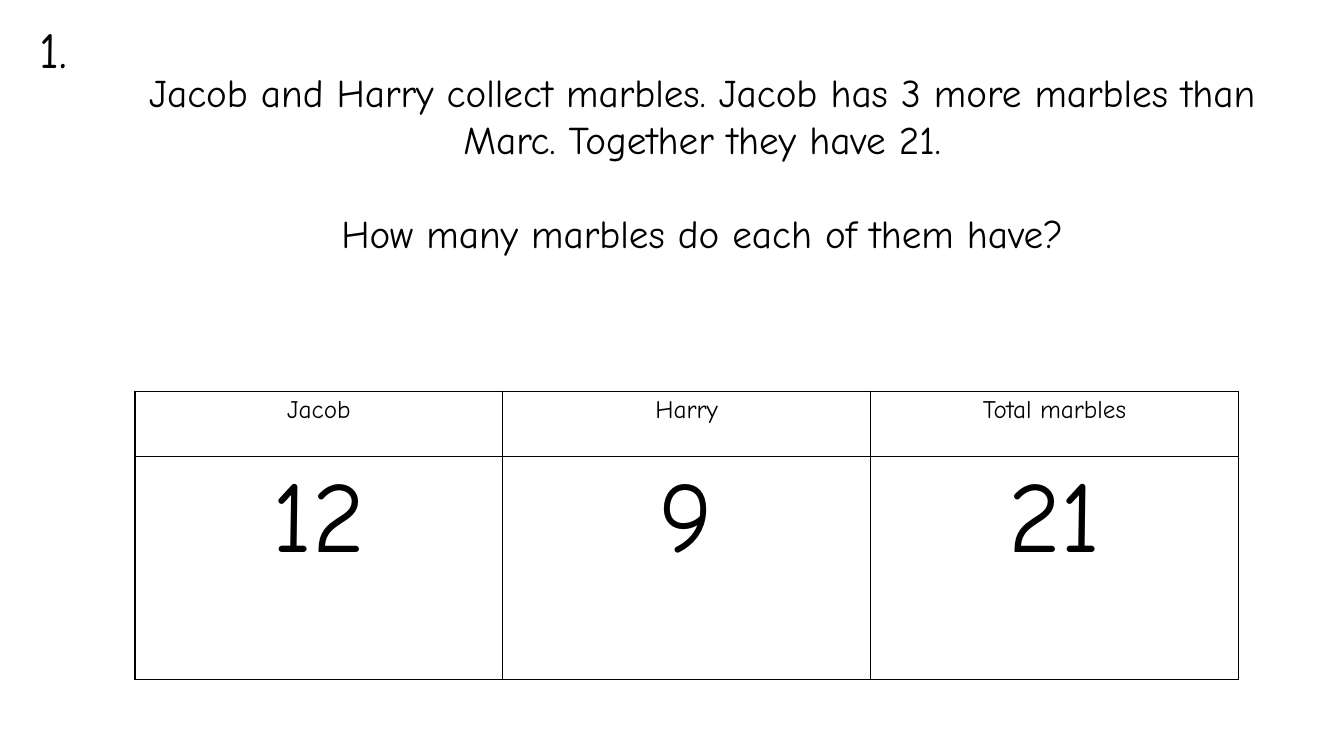
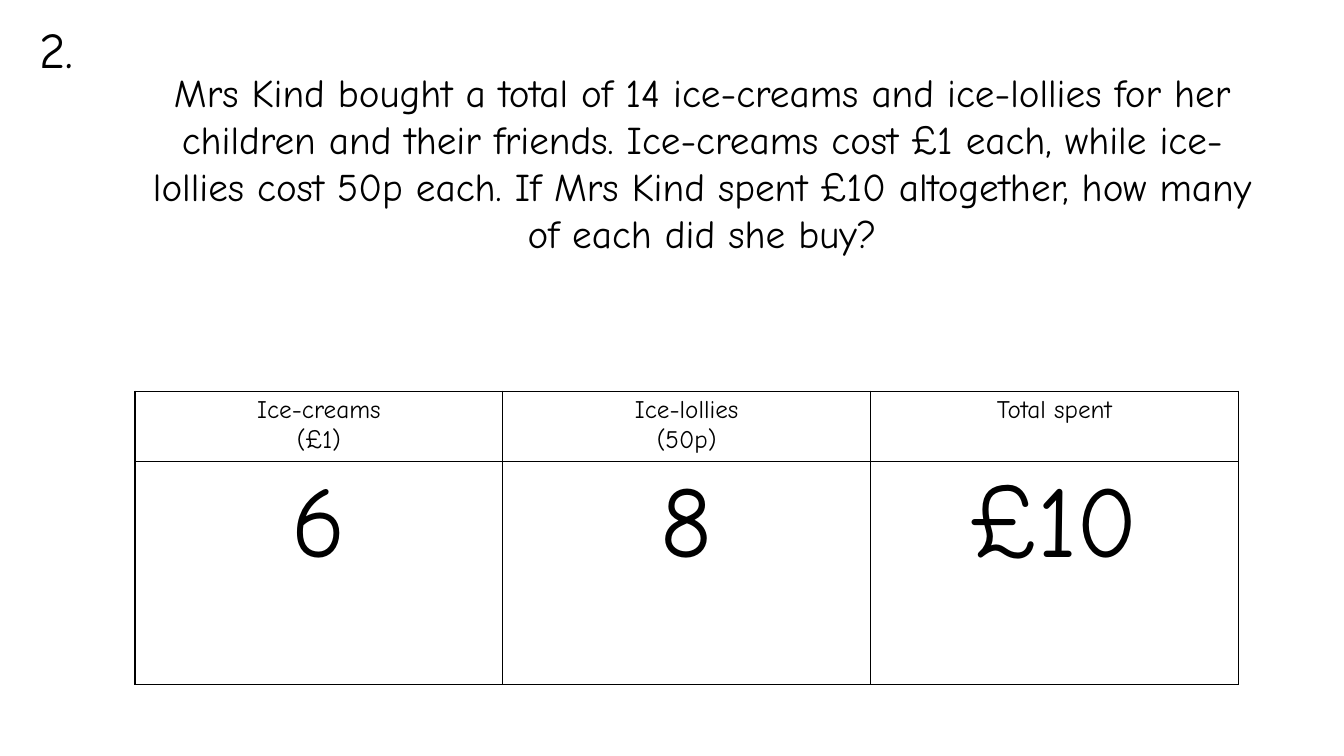
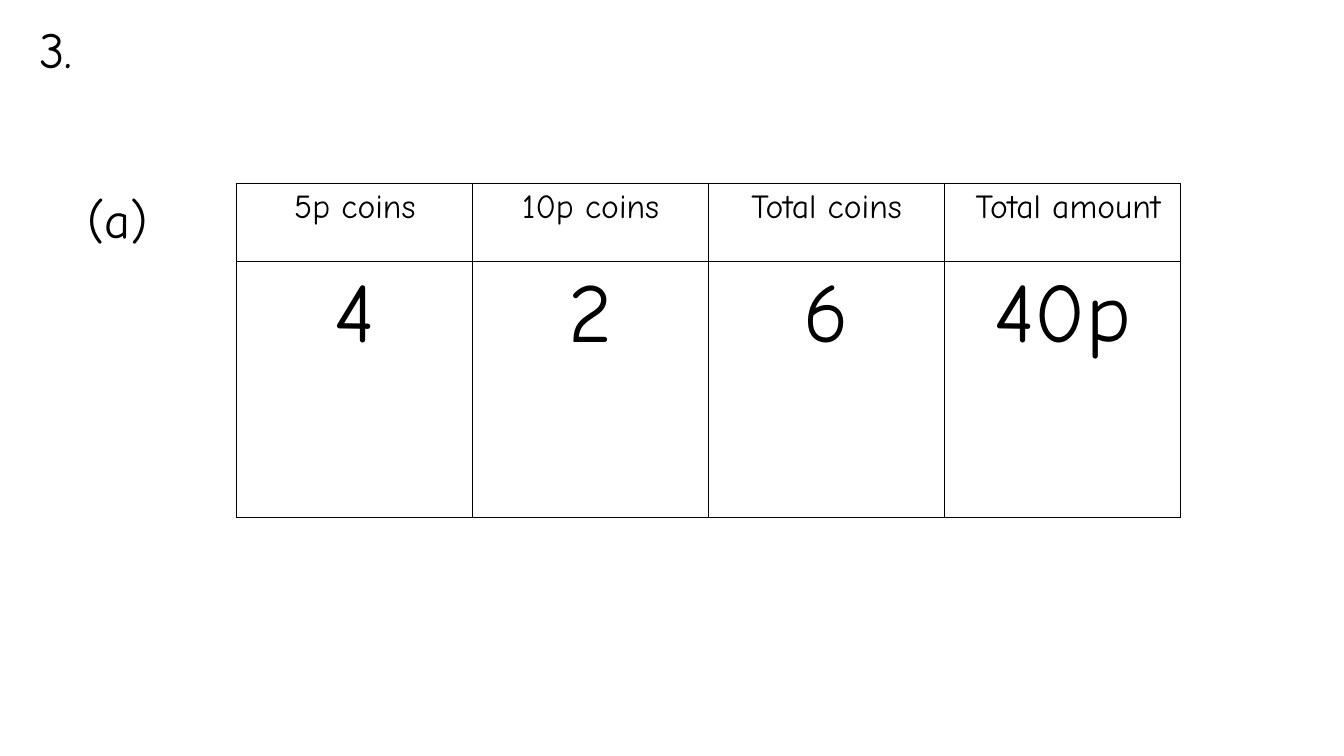
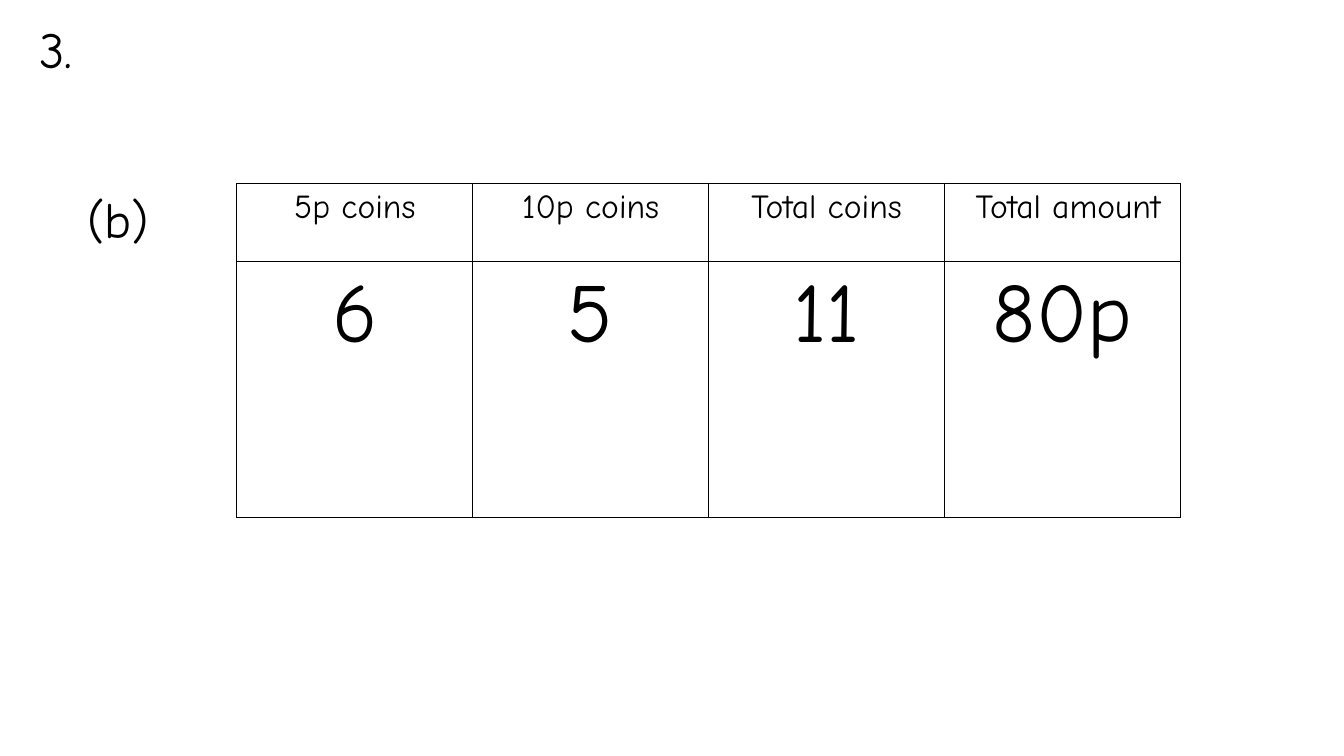
from lxml.etree import SubElement
from pptx import Presentation
from pptx.dml.color import RGBColor
from pptx.enum.text import MSO_AUTO_SIZE, PP_ALIGN
from pptx.oxml.ns import qn
from pptx.util import Pt

FONT = "Comic Neue"
BLACK = "000000"

NUMBER_BOX = (20.9, 9.4, 64, 51)
QUESTION_BOX = (96.5, 45.4, 810, 143)
PART_BOX = (55.4, 131, 71, 51)

# Table layouts: left, top, width, row heights, text size of each row
WORD_PROBLEM_TABLE = (96.5, 279.4, 788, (46.8, 159), (18, 72))
COIN_TABLE = (169.2, 131, 674, (56, 182.4), (24, 60))
COIN_HEADERS = ["5p coins", "10p coins", "Total coins", " Total amount"]

PROBLEMS = [
    {
        "number": "1.",
        "question": "Jacob and Harry collect marbles. Jacob has 3 more marbles than Marc. "
                    "Together they have 21.\nHow many marbles do each of them have?",
        "layout": WORD_PROBLEM_TABLE,
        "rows": [["Jacob", "Harry", "Total marbles"], ["12", "9", "21"]],
    },
    {
        "number": "2.",
        "question": "Mrs Kind bought a total of 14 ice-creams and ice-lollies for her children "
                    "and their friends. Ice-creams cost £1 each, while ice-lollies cost 50p each. "
                    "If Mrs Kind spent £10 altogether, how many of each did she buy?",
        "layout": WORD_PROBLEM_TABLE,
        "rows": [["Ice-creams\n(£1)", "Ice-lollies\n(50p)", "Total spent"], ["6", "8", "£10"]],
    },
    {
        "number": "3.",
        "part": "(a)",
        "layout": COIN_TABLE,
        "rows": [COIN_HEADERS, ["4", "2", "6", "40p"]],
    },
    {
        "number": "3.",
        "part": "(b)",
        "layout": COIN_TABLE,
        "rows": [COIN_HEADERS, ["6", "5", "11", "80p"]],
    },
]


def write_text(text_frame, text, size=36, align=PP_ALIGN.LEFT, gap=0, color=BLACK):
    """Write one paragraph per line of text, with a gap between paragraphs."""
    text_frame.word_wrap = True
    for index, line in enumerate(text.split("\n")):
        paragraph = text_frame.add_paragraph() if index else text_frame.paragraphs[0]
        paragraph.alignment = align
        paragraph.space_before = Pt(gap if index else 0)
        run = paragraph.add_run()
        run.text = line
        run.font.name = FONT
        run.font.size = Pt(size)
        run.font.color.rgb = RGBColor.from_string(color)


def set_cell_borders(cell, color=BLACK, width=1):
    properties = cell._tc.get_or_add_tcPr()
    for side in ("lnL", "lnR", "lnT", "lnB"):
        line = SubElement(properties, qn(f"a:{side}"), w=str(Pt(width)))
        fill = SubElement(line, qn("a:solidFill"))
        SubElement(fill, qn("a:srgbClr"), val=color)


presentation = Presentation()
presentation.slide_width = Pt(960)
presentation.slide_height = Pt(540)

for problem in PROBLEMS:
    slide = presentation.slides.add_slide(presentation.slide_layouts[6])

    labels = [
        ("number", NUMBER_BOX, {}),
        ("question", QUESTION_BOX, {"size": 28, "align": PP_ALIGN.CENTER, "gap": 33.6}),
        ("part", PART_BOX, {}),
    ]
    for name, box, text_format in labels:
        if name in problem:
            text_box = slide.shapes.add_textbox(*map(Pt, box))
            write_text(text_box.text_frame, problem[name], **text_format)
            text_box.text_frame.auto_size = MSO_AUTO_SIZE.SHAPE_TO_FIT_TEXT

    left, top, width, heights, sizes = problem["layout"]
    rows = problem["rows"]
    table = slide.shapes.add_table(
        len(rows), len(rows[0]), Pt(left), Pt(top), Pt(width), Pt(sum(heights))
    ).table
    table.first_row = False
    table.horz_banding = False
    for row_index, (texts, height, size) in enumerate(zip(rows, heights, sizes)):
        table.rows[row_index].height = Pt(height)
        for column_index, text in enumerate(texts):
            cell = table.cell(row_index, column_index)
            write_text(cell.text_frame, text, size=size, align=PP_ALIGN.CENTER)
            set_cell_borders(cell)
            cell.fill.background()

presentation.save("out.pptx")
